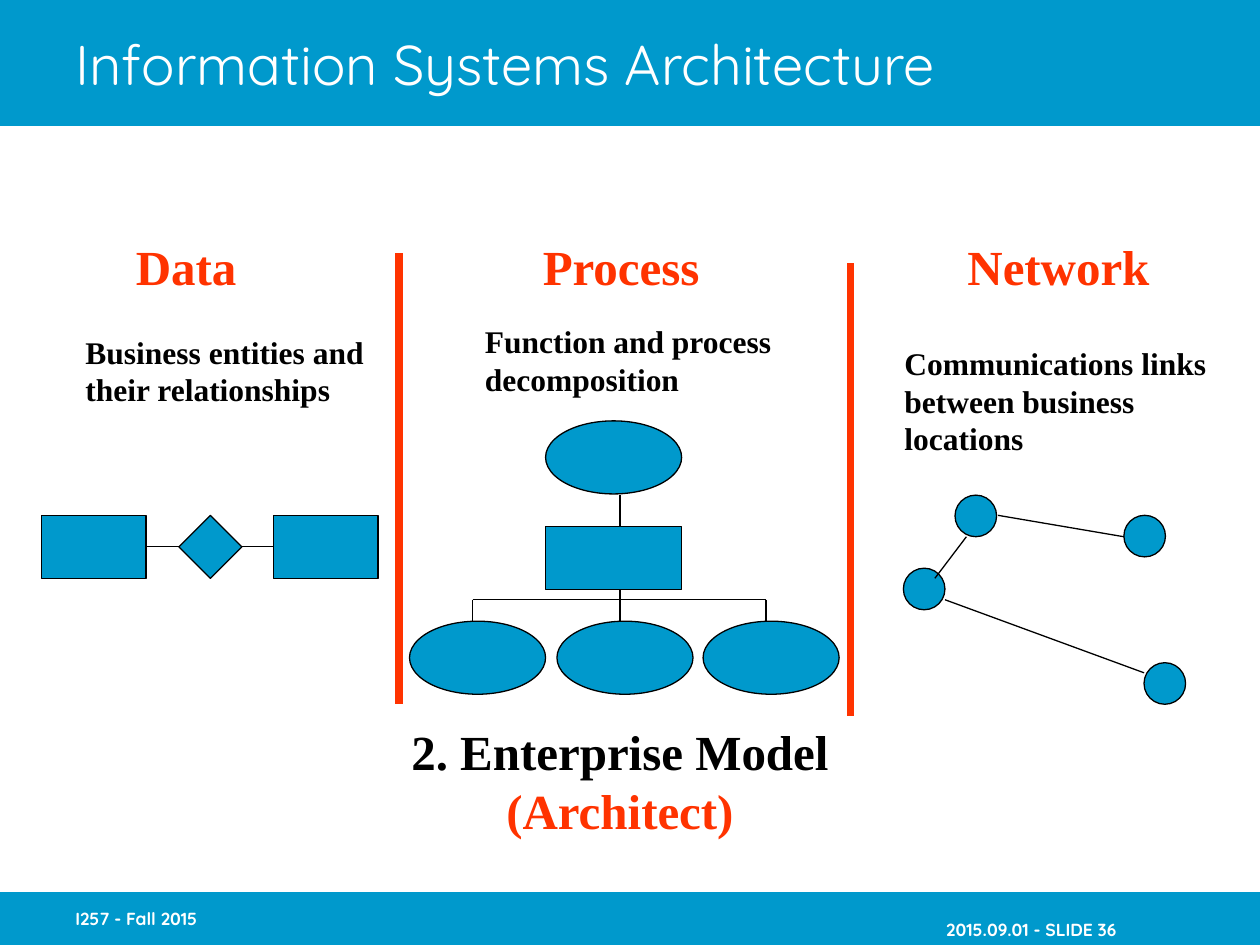
"""Build the Information Systems Architecture slide."""
from lxml.etree import SubElement
from pptx import Presentation
from pptx.dml.color import RGBColor
from pptx.enum.shapes import MSO_CONNECTOR, MSO_SHAPE as SHAPE
from pptx.enum.text import MSO_ANCHOR as ANCHOR, PP_ALIGN as ALIGN
from pptx.oxml.ns import qn
from pptx.util import Inches, Pt

BLUE, RED, BLACK, WHITE = "0099CC", "FF3300", "000000", "FFFFFF"
SANS, SERIF = "Quicksand", "Times New Roman"

TITLE = "Information Systems Architecture"
BANDS = [(0, 1), (7.08, 0.42)]
FOOTERS = [
    ("I257 - Fall 2015", (0.5, 7.08, 2.08, 0.42), ALIGN.LEFT),
    ("2015.09.01 - SLIDE 36", (6.86, 7.17, 2, 0.42), ALIGN.RIGHT),
]
HEADINGS = ["Data", "Process", "Network"]
HEADING_TABS = [3.23, 6.6]
CAPTIONS = [
    (["Business entities and", "their relationships"], (0.58, 2.59, 2.41, 0.7)),
    (["Function and process", "decomposition"], (3.75, 2.51, 2.48, 0.7)),
    (["Communications links", "between business", "locations"], (7.08, 2.68, 2.6, 1)),
]
MODEL = ["2. Enterprise Model", "(Architect)"]
DIVIDERS = [(3.17, 2.01, 3.17, 5.59), (6.75, 2.09, 6.75, 5.68)]

ENTITIES = [(SHAPE.RECTANGLE, 0.33, 0.83), (SHAPE.DIAMOND, 1.42, 0.5), (SHAPE.RECTANGLE, 2.17, 0.83)]
PROCESS_W, ELLIPSE_H = 1.08, 0.58
ROOT, STEP = (4.33, 3.34), (4.33, 4.18)
LEAF_LEFTS, LEAF_TOP = [3.25, 4.42, 5.58], 4.93
BRANCHES, BUS_Y = [3.75, 4.92, 6.08], 4.76
NODES, NODE_D = [(8.92, 4.09), (7.58, 3.93), (7.17, 4.51), (9.08, 5.26)], 0.33
LINKS = [(7.92, 4.09, 8.92, 4.26), (7.67, 4.26, 7.42, 4.59), (7.5, 4.76, 9.08, 5.34)]


def rgb(value):
    """Turn a hex string into a colour."""
    return RGBColor.from_string(value)


def write(tf, lines, size, colors=(BLACK,), font=SERIF, bold=True,
          align=ALIGN.LEFT, anchor=ANCHOR.TOP, wrap=False, tabs=()):
    """Fill a text frame, one paragraph a line, cycling through the colours."""
    tf.word_wrap, tf.vertical_anchor = wrap, anchor
    for i, line in enumerate(lines):
        p = tf.add_paragraph() if i else tf.paragraphs[0]
        p.alignment = align
        if tabs:
            tab_list = SubElement(p._p.get_or_add_pPr(), qn("a:tabLst"))
            for pos in tabs:
                SubElement(tab_list, qn("a:tab"), pos=str(Inches(pos)), algn="l")
        r = p.add_run()
        r.text = line
        r.font.name, r.font.size, r.font.bold = font, Pt(size), bold
        r.font.color.rgb = rgb(colors[i % len(colors)])


def add_text(s, box, lines, size, **fmt):
    """Add a text box and return its text frame."""
    tf = s.shapes.add_textbox(*map(Inches, box)).text_frame
    write(tf, lines, size, **fmt)
    return tf


def add_block(s, kind, left, top, width, height, line=BLACK):
    """Add a blue shape, outlined when a line colour is given."""
    sp = s.shapes.add_shape(kind, *map(Inches, (left, top, width, height)))
    sp.shadow.inherit = False
    sp.fill.solid()
    sp.fill.fore_color.rgb = rgb(BLUE)
    if line:
        sp.line.color.rgb, sp.line.width = rgb(line), Pt(0.75)
    else:
        sp.line.fill.background()
    return sp


def add_line(s, ends, color=BLACK, width=0.75):
    """Add a straight connector without a shadow."""
    line = s.shapes.add_connector(MSO_CONNECTOR.STRAIGHT, *map(Inches, ends))
    line.line.color.rgb, line.line.width = rgb(color), Pt(width)
    SubElement(line._element.spPr, qn("a:effectLst"))
    return line


def add_frame(s):
    """Add the bands, the title and the footers."""
    for top, height in BANDS:
        add_block(s, SHAPE.RECTANGLE, 0, top, 10, height, line=None)
    title = s.shapes.title
    s.shapes._spTree.append(title._element)
    title.left, title.top, title.width, title.height = map(Inches, (0.5, 0, 8.5, 1))
    write(title.text_frame, [TITLE], 32, colors=[WHITE], font=SANS, bold=False,
          anchor=ANCHOR.MIDDLE, wrap=True)
    for text, box, align in FOOTERS:
        tf = add_text(s, box, [text], 10, colors=[WHITE], font=SANS, align=align,
                      anchor=ANCHOR.MIDDLE, wrap=True)
        tf.margin_right = 0


def add_labels(s):
    """Add the column headings, captions, model name and dividers."""
    add_text(s, (0.98, 1.83, 8.27, 0.57), ["\t".join(HEADINGS)], 28, colors=[RED],
             wrap=True, tabs=HEADING_TABS)
    for lines, box in CAPTIONS:
        add_text(s, box, lines, 18)
    add_text(s, (3.16, 5.68, 3.52, 1.03), MODEL, 28, colors=[BLACK, RED], align=ALIGN.CENTER)
    for ends in DIVIDERS:
        add_line(s, ends, RED, 4.5)


def add_data(s):
    """Add two entities joined through a relationship."""
    blocks = [add_block(s, kind, left, 4.09, width, 0.5) for kind, left, width in ENTITIES]
    for a, b in zip(blocks, blocks[1:]):
        line = add_line(s, (0, 0, 1, 1))
        line.begin_connect(a, 3)
        line.end_connect(b, 1)


def add_process(s):
    """Add the decomposition tree."""
    for left, top in [ROOT] + [(x, LEAF_TOP) for x in LEAF_LEFTS]:
        add_block(s, SHAPE.OVAL, left, top, PROCESS_W, ELLIPSE_H)
    add_block(s, SHAPE.RECTANGLE, *STEP, PROCESS_W, 0.5)
    trunk = BRANCHES[1]
    add_line(s, (trunk, 3.93, trunk, 4.18))
    add_line(s, (trunk, 4.68, trunk, BUS_Y))
    add_line(s, (BRANCHES[0], BUS_Y, BRANCHES[-1], BUS_Y))
    for x in BRANCHES:
        add_line(s, (x, BUS_Y, x, LEAF_TOP))


def add_network(s):
    """Add the locations and the links between them."""
    for left, top in NODES:
        add_block(s, SHAPE.OVAL, left, top, NODE_D, NODE_D)
    for ends in LINKS:
        add_line(s, ends)


def main():
    """Build and save the slide."""
    prs = Presentation()
    prs.slide_width, prs.slide_height = Inches(10), Inches(7.5)
    s = prs.slides.add_slide(prs.slide_layouts[5])
    for add_part in (add_frame, add_labels, add_data, add_process, add_network):
        add_part(s)
    prs.save("out.pptx")


if __name__ == "__main__":
    main()
